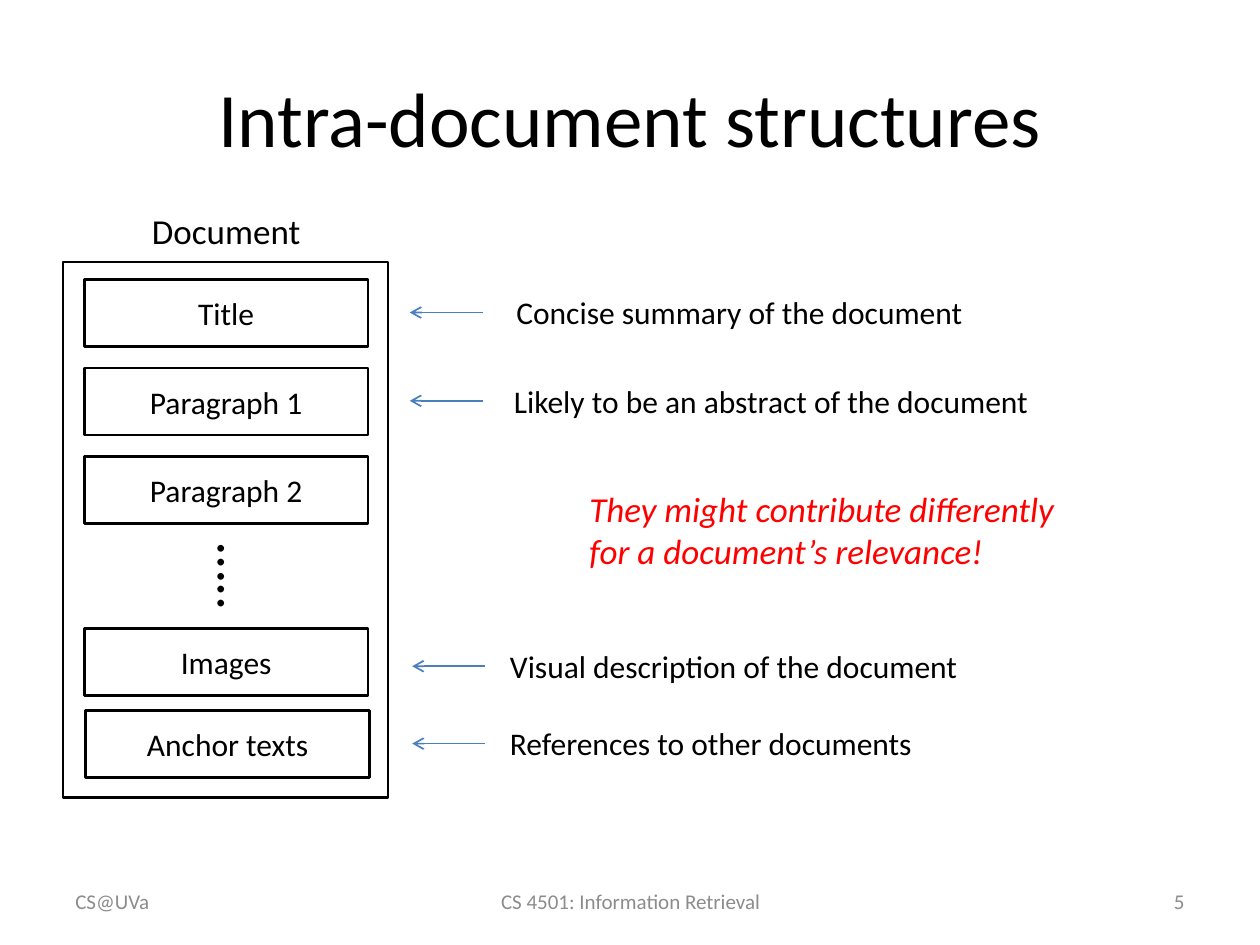
from lxml import etree
from pptx import Presentation
from pptx import util as u
from pptx.dml.color import RGBColor
from pptx.enum import shapes, text
from pptx.oxml.ns import qn

COLORS = {"ink": "000000", "arrow": "4B7EBC", "remark": "FF0000", "footer": "8C8C8C"}
LEFT, CENTER, RIGHT = text.PP_ALIGN.LEFT, text.PP_ALIGN.CENTER, text.PP_ALIGN.RIGHT
TOP, MIDDLE = text.MSO_ANCHOR.TOP, text.MSO_ANCHOR.MIDDLE


def write(box, words, size, align=LEFT, anchor=TOP, color="ink", italic=False):
    frame = box.text_frame
    frame.word_wrap = True
    frame.vertical_anchor = anchor
    para = frame.paragraphs[0]
    para.alignment = align
    span = para.add_run()
    span.text = words
    font_format = {"name": "Calibri", "size": u.Pt(size), "italic": italic}
    for name, value in font_format.items():
        setattr(span.font, name, value)
    span.font.color.rgb = RGBColor.from_string(COLORS[color])


def add_box(left, top, width, height, outlined=False):
    place = [u.Cm(length) for length in (left, top, width, height)]
    if not outlined:
        return page.shapes.add_textbox(*place)
    box = page.shapes.add_shape(shapes.MSO_SHAPE.RECTANGLE, *place)
    box.shadow.inherit = False
    box.fill.background()
    box.line.color.rgb = RGBColor.from_string(COLORS["ink"])
    box.line.width = u.Pt(1.5)
    return box


deck = Presentation()
deck.slide_width, deck.slide_height = u.Cm(25.4), u.Cm(19.05)
page = deck.slides.add_slide(deck.slide_layouts[5])

# Title
title = page.shapes.title
title_place = {"left": 1.27, "top": 0.76, "width": 22.86, "height": 3.18}
for name, value in title_place.items():
    setattr(title, name, u.Cm(value))
write(title, "Intra-document structures", 44, CENTER, MIDDLE)

# Document frame and its parts
add_box(1.27, 5.28, 6.55, 10.8, outlined=True)
parts = [
    ("Title", 1.7, 5.64),
    ("Paragraph 1", 1.7, 7.42),
    ("Paragraph 2", 1.7, 9.2),
    ("Images", 1.7, 12.67),
    ("Anchor texts", 1.73, 14.33),
]
for words, left, top in parts:
    write(add_box(left, top, 5.72, 1.35, outlined=True), words, 18, CENTER, MIDDLE)

# Heading and vertical dots
write(add_box(1.83, 4.09, 5.46, 1.11), "Document", 20, CENTER)
dots = add_box(3.56, 10.82, 2.54, 1.63)
dots.rotation = 90
write(dots, "…..", 32, CENTER)

# Notes with arrows: words, text left, arrow tip, arrow height
ARROW_LENGTH = 1.47
notes = [
    ("Concise summary of the document", 10.16, 8.26, 6.3),
    ("Likely to be an abstract of the document", 10.11, 8.26, 8.08),
    ("Visual description of the document", 10.03, 8.31, 13.43),
    ("References to other documents", 10.03, 8.31, 14.99),
]
for words, left, tip, middle in notes:
    write(add_box(left, middle - 0.51, 11.91, 1.02), words, 18)
    arrow = page.shapes.add_connector(
        shapes.MSO_CONNECTOR.STRAIGHT,
        u.Cm(tip + ARROW_LENGTH), u.Cm(middle), u.Cm(tip), u.Cm(middle))
    arrow.line.color.rgb = RGBColor.from_string(COLORS["arrow"])
    arrow.line.width = u.Pt(1)
    etree.SubElement(arrow.line._get_or_add_ln(), qn("a:tailEnd"), type="arrow")
    etree.SubElement(arrow._element.spPr, qn("a:effectLst"))

# Remark
remark = add_box(11.63, 9.7, 10.8, 1.96)
write(remark, "They might contribute differently for a document’s relevance!", 20,
      color="remark", italic=True)

# Footer
footers = [
    ("CS@UVa", 1.27, 5.92, LEFT),
    ("CS 4501: Information Retrieval", 8.69, 8.05, CENTER),
    ("5", 18.21, 5.92, RIGHT),
]
for words, left, width, align in footers:
    write(add_box(left, 17.65, width, 1.02), words, 12, align, MIDDLE, "footer")

deck.save("out.pptx")
